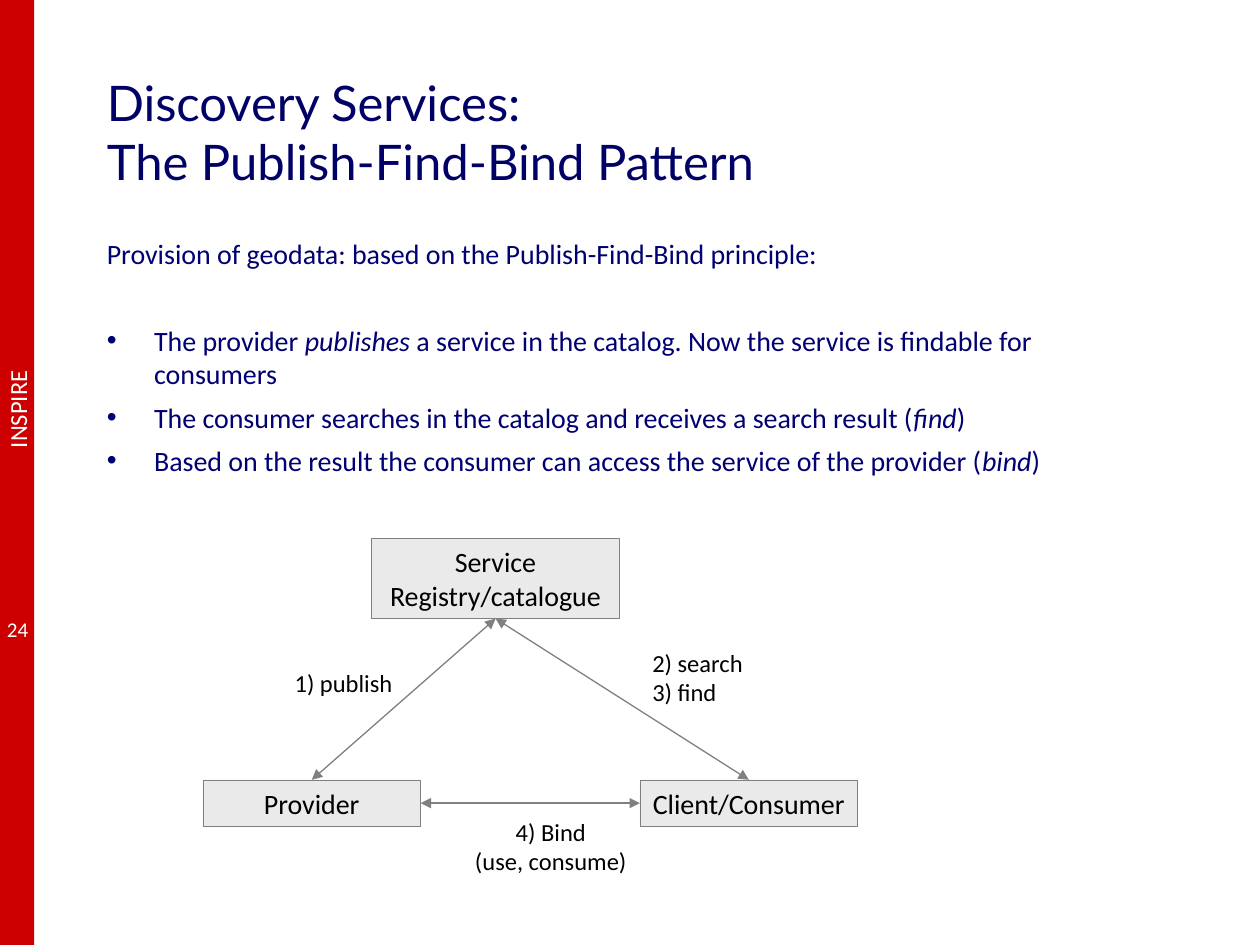
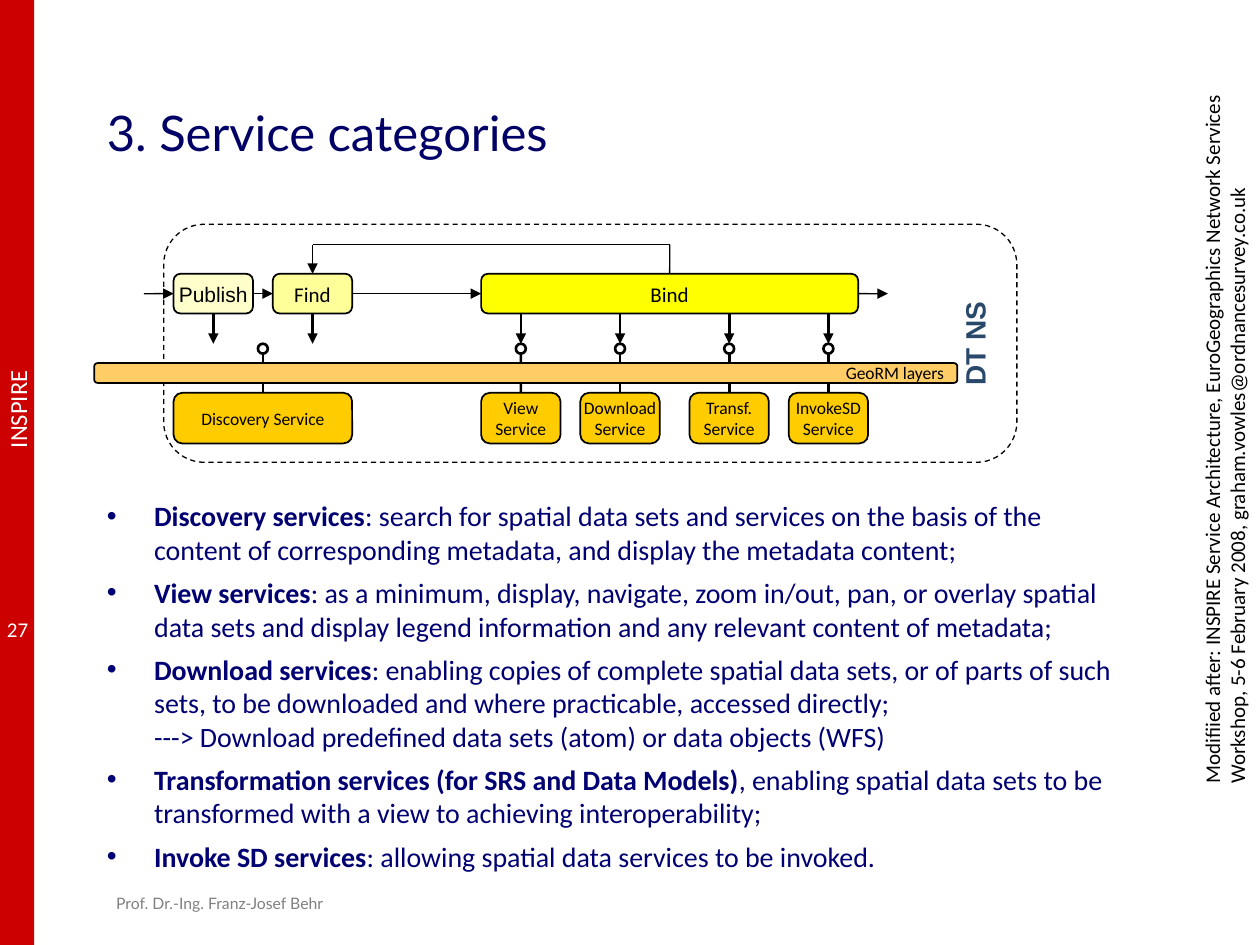
"""Build two slides on geodata discovery services and service categories."""
import dataclasses

import pptx
import pptx.dml.color
import pptx.enum.dml
import pptx.enum.shapes
import pptx.enum.text
import pptx.oxml.ns
import pptx.oxml.xmlchemy
import pptx.util

Cm = pptx.util.Cm
Pt = pptx.util.Pt
RGB = pptx.dml.color.RGBColor.from_string
SHAPE = pptx.enum.shapes.MSO_SHAPE
ALIGN = pptx.enum.text.PP_ALIGN
ANCHOR = pptx.enum.text.MSO_ANCHOR
qn = pptx.oxml.ns.qn
new_element = pptx.oxml.xmlchemy.OxmlElement


@dataclasses.dataclass(frozen=True)
class Theme:
    band: str = "CC0000"
    title: str = "000066"
    body: str = "000072"
    black: str = "000000"
    white: str = "FFFFFF"
    gray: str = "808080"
    panel: str = "EAEAEA"
    service: str = "FFCC00"
    layer: str = "FFCC66"
    publish: str = "FFFFCC"
    find: str = "FFFF99"
    bind: str = "FFFF00"
    network: str = "29496B"
    title_font: str = "Lato"
    text_font: str = "Calibri"
    plain_font: str = "Arial"
    title_size: float = 28
    body_size: float = 16
    label_size: float = 14
    step_size: float = 12
    small_size: float = 10
    footer_size: float = 9
    list_gap: float = 5.4
    intro_gap: float = 30.2


theme = Theme()


def put_box(page, kind, at, text="", size=theme.body_size, color=theme.black, fill=None,
            line=None, width=1, font=theme.text_font, align=ALIGN.CENTER, bold=False,
            wrap=False, anchor=ANCHOR.MIDDLE, turn=0):
    """Add a preset shape, or a text box when kind is None, and return it."""
    frame = [Cm(length) for length in at]
    if kind is None:
        box = page.shapes.add_textbox(*frame)
    else:
        box = page.shapes.add_shape(kind, *frame)
        box.shadow.inherit = False
        if kind == SHAPE.ROUNDED_RECTANGLE:
            box.adjustments[0] = 0.17
        if fill:
            box.fill.solid()
            box.fill.fore_color.rgb = RGB(fill)
        else:
            box.fill.background()
        if line:
            box.line.color.rgb = RGB(line)
            box.line.width = Pt(width)
        else:
            box.line.fill.background()
    box.rotation = turn
    if text:
        box.text_frame.text = text
        box.text_frame.word_wrap = wrap
        box.text_frame.vertical_anchor = anchor
        for para in box.text_frame.paragraphs:
            para.alignment = align
            para.font.name = font
            para.font.size = Pt(size)
            para.font.bold = bold
            para.font.color.rgb = RGB(color)
    return box


def put_line(page, start, end, color=theme.black, width=0.75, arrows=()):
    """Draw a straight line; each end is (x, y) in cm or (shape, connection site)."""
    joined = [hasattr(spot[0], "shape_id") for spot in (start, end)]
    points = [(0, 0) if tied else spot for spot, tied in zip((start, end), joined)]
    line = page.shapes.add_connector(
        pptx.enum.shapes.MSO_CONNECTOR.STRAIGHT,
        *[Cm(length) for point in points for length in point])
    if joined[0]:
        line.begin_connect(*start)
    if joined[1]:
        line.end_connect(*end)
    line.line.color.rgb = RGB(color)
    line.line.width = Pt(width)
    properties = line.element.spPr
    for tag in arrows:
        arrow = new_element(tag)
        arrow.set("type", "triangle")
        properties.find(qn("a:ln")).append(arrow)
    properties.append(new_element("a:effectLst"))


deck = pptx.Presentation()
deck.slide_width = Cm(25.4)
deck.slide_height = Cm(19.05)

contents = [
    ("24", "Discovery Services:\vThe Publish-Find-Bind Pattern", 4.65, 12.5,
     "Provision of geodata: based on the Publish-Find-Bind principle:", "italic", [
         "The provider |publishes| a service in the catalog. Now the service is findable "
         "for consumers",
         "The consumer searches in the catalog and receives a search result (|find|)",
         "Based on the result the consumer can access the service of the provider (|bind|)"]),
    ("27", "3. Service categories", 9.93, 7.21, None, "bold", [
        "|Discovery services|: search for spatial data sets and services on the basis of "
        "the content of corresponding metadata, and display the metadata content;",
        "|View services|: as a minimum, display, navigate, zoom in/out, pan, or overlay "
        "spatial data sets and display legend information and any relevant content of "
        "metadata;",
        "|Download services|: enabling copies of complete spatial data sets, or of parts of "
        "such sets, to be downloaded and where practicable, accessed directly;\n"
        "---> Download predefined data sets (atom) or data objects (WFS)",
        "|Transformation services (for SRS and Data Models)|, enabling spatial data sets to "
        "be transformed with a view to achieving interoperability;",
        "|Invoke SD services|: allowing spatial data services to be invoked."]),
]

pages = []
for number, heading, body_top, body_height, intro, emphasis, items in contents:
    page = deck.slides.add_slide(deck.slide_layouts[1])
    pages.append(page)
    put_box(page, SHAPE.RECTANGLE, (0, 0, 0.69, 19.05), fill=theme.band)
    put_box(page, None, (-0.69, 7.82, 2.08, 0.86), "INSPIRE", theme.label_size,
            theme.white, turn=270)
    put_box(page, None, (-0.18, 12.27, 1.07, 0.84), number, theme.step_size, theme.white)

    title, body = page.placeholders
    for holder, top, height in ((title, 1.7, 1.9), (body, body_top, body_height)):
        holder.left, holder.top = Cm(1.9), Cm(top)
        holder.width, holder.height = Cm(20.78), Cm(height)
        holder.text_frame.auto_size = pptx.enum.text.MSO_AUTO_SIZE.NONE
    title.text_frame.text = heading
    title.text_frame.vertical_anchor = ANCHOR.MIDDLE
    para = title.text_frame.paragraphs[0]
    para.alignment = ALIGN.LEFT
    para.font.name = theme.title_font
    para.font.size = Pt(theme.title_size)
    para.font.color.rgb = RGB(theme.title)

    entries = ([intro] if intro else []) + items
    for index, entry in enumerate(entries):
        para = body.text_frame.add_paragraph() if index else body.text_frame.paragraphs[0]
        after_intro = intro and index == 1
        gap = theme.intro_gap if after_intro else theme.list_gap
        para.space_before = Pt(gap if index else 0)
        if entry is intro:
            settings = para._p.get_or_add_pPr()
            settings.set("marL", "0")
            settings.set("indent", "0")
            settings.append(new_element("a:buNone"))
        para.font.name = theme.text_font
        para.font.size = Pt(theme.body_size)
        para.font.color.rgb = RGB(theme.body)
        for order, part in enumerate(entry.split("|")):
            for row, piece in enumerate(part.split("\n")):
                if row:
                    para.add_line_break()
                if piece:
                    span = para.add_run()
                    span.text = piece
                    if order % 2:
                        setattr(span.font, emphasis, True)

pattern, categories = pages

registry, provider, consumer = [
    put_box(pattern, SHAPE.RECTANGLE, at, text, fill=theme.panel, line=theme.gray,
            width=0.25, wrap=True)
    for text, at in (("Service Registry/catalogue", (7.49, 10.85, 5, 1.62)),
                     ("Provider", (4.09, 15.72, 4.39, 0.94)),
                     ("Client/Consumer", (12.9, 15.72, 4.39, 0.94)))]
for start, end in (((consumer, 1), (provider, 3)),
                   ((registry, 2), (provider, 0)),
                   ((registry, 2), (consumer, 0))):
    put_line(pattern, start, end, theme.gray, arrows=("a:headEnd", "a:tailEnd"))
for text, at, align in (("4) Bind\n(use, consume)", (9.3, 16.33, 3.61, 1.45), ALIGN.CENTER),
                        ("1) publish", (5.69, 13.34, 2.51, 0.86), ALIGN.LEFT),
                        ("2) search\n3) find", (12.9, 12.93, 2.36, 1.45), ALIGN.LEFT)):
    put_box(pattern, None, at, text, theme.label_size, align=align)

network = put_box(categories, SHAPE.ROUNDED_RECTANGLE, (9.5, -1.68, 4.8, 17.2), "DT NS",
                  color=theme.network, line=theme.black, width=0.75,
                  font=theme.plain_font, bold=True, anchor=ANCHOR.BOTTOM, turn=270)
network.line.dash_style = pptx.enum.dml.MSO_LINE.DASH
network.text_frame.margin_bottom = Cm(0.28)

step_top, step_height, step_width = 5.52, 0.8, 1.6
step_middle = step_top + step_height / 2
step_bottom = step_top + step_height
publish, find, bind = [
    put_box(categories, SHAPE.ROUNDED_RECTANGLE, (left, step_top, width, step_height), text,
            theme.step_size, fill=fill, line=theme.black, font=font)
    for text, left, width, fill, font in (
        ("Publish", 3.5, step_width, theme.publish, theme.plain_font),
        ("Find", 5.5, step_width, theme.find, theme.text_font),
        ("Bind", 9.7, 7.6, theme.bind, theme.text_font))]

for start, end in (((2.9, step_middle), (publish, 1)), ((publish, 3), (find, 1)),
                   ((find, 3), (bind, 1)), ((bind, 3), (17.9, step_middle))):
    put_line(categories, start, end, arrows=("a:tailEnd",))
loop_top = 4.93
put_line(categories, (bind, 0), (13.5, loop_top))
put_line(categories, (13.5, loop_top), (6.3, loop_top))
put_line(categories, (6.3, loop_top), (find, 0), arrows=("a:tailEnd",))

service_top, service_height, arrow_end, port = 7.92, 1.02, 6.93, 0.2
for step in (publish, find):
    center = (step.left + step.width / 2) / Cm(1)
    put_line(categories, (step, 2), (center, arrow_end), width=1.5, arrows=("a:tailEnd",))
for text, left, width in (("Discovery Service", 3.5, 3.6),
                          ("View\vService", 9.7, step_width),
                          ("Download\vService", 11.7, step_width),
                          ("Transf.\nService", 13.9, step_width),
                          ("InvokeSD\vService", 15.9, step_width)):
    center = left + width / 2
    service = put_box(categories, SHAPE.ROUNDED_RECTANGLE,
                      (left, service_top, width, service_height), text, theme.small_size,
                      fill=theme.service, line=theme.black)
    put_line(categories, (center, arrow_end + port), (service, 0), width=1.5)
    if width == step_width:
        put_line(categories, (center, step_bottom), (center, arrow_end), width=1.5,
                 arrows=("a:tailEnd",))
    put_box(categories, SHAPE.OVAL, (center - port / 2, arrow_end, port, port),
            fill=theme.white, line=theme.black, width=1.5)
put_box(categories, SHAPE.ROUNDED_RECTANGLE, (1.9, 7.32, 17.4, 0.4), "GeoRM layers",
        theme.small_size, fill=theme.layer, line=theme.black, align=ALIGN.RIGHT, wrap=True)

put_box(categories, None, (0.89, 17.88, 5.87, 0.64), "Prof. Dr.-Ing. Franz-Josef Behr",
        theme.footer_size, theme.gray, font=theme.title_font, align=ALIGN.RIGHT, wrap=True)
put_box(categories, None, (17.02, 7.75, 15.32, 1.27),
        "Modifiied after: INSPIRE Service Architecture, EuroGeographics Network Services "
        "Workshop, 5-6 February 2008, graham.vowles@ordnancesurvey.co.uk",
        theme.step_size, align=ALIGN.LEFT, wrap=True, turn=270)

deck.save("out.pptx")
